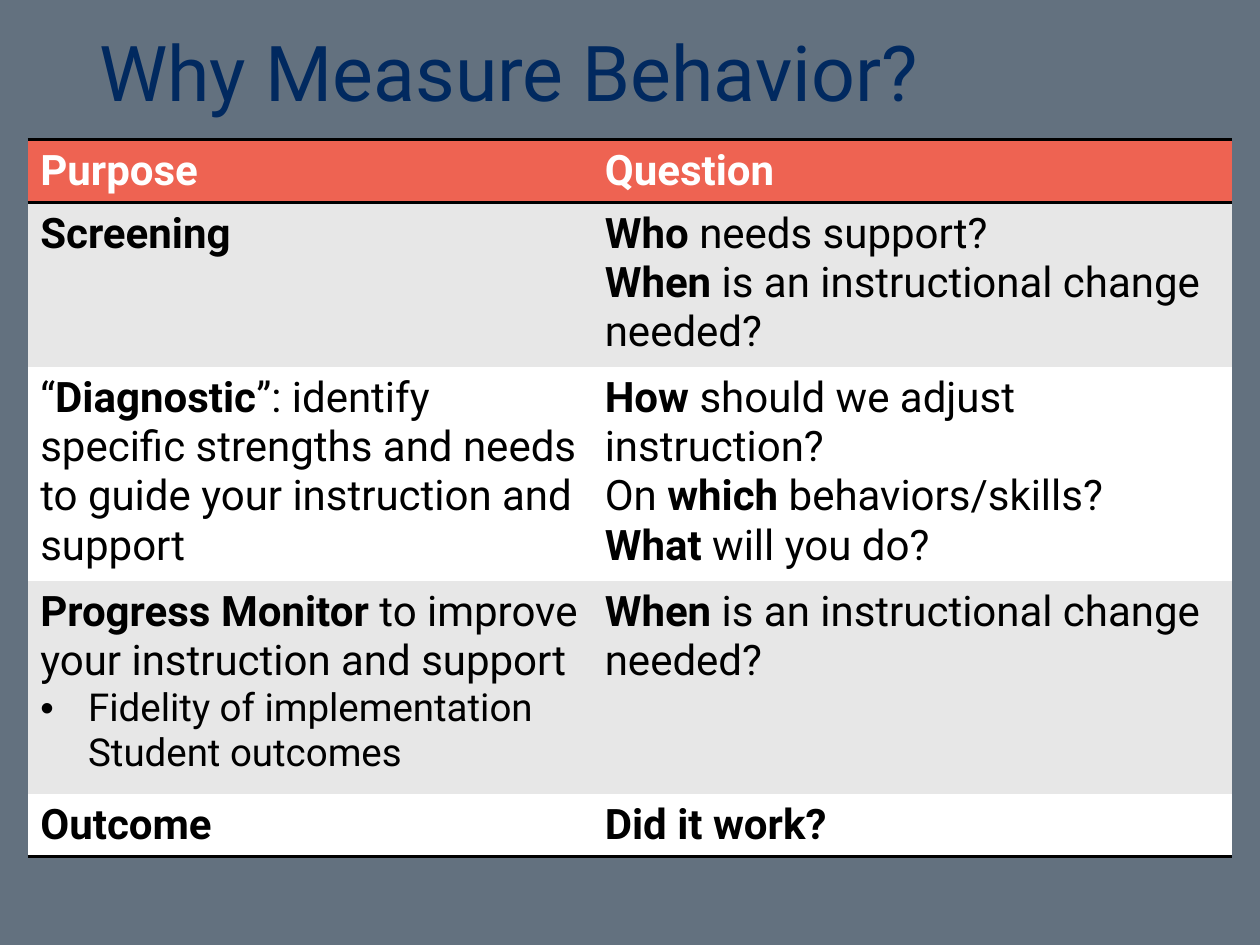
from pptx import Presentation
from pptx.dml.color import RGBColor
from pptx.enum.text import MSO_ANCHOR
from pptx.oxml.ns import qn
from pptx.util import Inches, Pt
from lxml import etree

MIDDLE = MSO_ANCHOR.MIDDLE
SLATE = RGBColor(0x63, 0x71, 0x7F)
NAVY = RGBColor(0x01, 0x29, 0x5F)
CORAL = RGBColor(0xEE, 0x63, 0x52)
GREY = RGBColor(0xE7, 0xE7, 0xE7)
WHITE = RGBColor(0xFF, 0xFF, 0xFF)
BLACK = RGBColor(0, 0, 0)
FONT = "Roboto"
PLAIN_STYLE = "{2D5ABB26-0587-4C30-8999-92F81FD0307C}"

COLS = [4.48, 5.08]
HEIGHTS = [0.45, 0.8, 1.16, 1.69, 0.45]
BULLET = "•"
# Each cell is a list of paragraphs; ** switches bold on and off.
ROWS = [
    (["**Purpose**"], ["**Question**"]),
    (["**Screening**"],
     ["**Who** needs support?",
      "**When** is an instructional change needed?"]),
    (["“**Diagnostic**”: identify specific strengths and needs "
      "to guide your instruction and support"],
     ["**How** should we adjust instruction?",
      "On **which** behaviors/skills?",
      "**What** will you do?"]),
    (["**Progress Monitor **to improve your instruction and support",
      BULLET + "Fidelity of implementation Student outcomes"],
     ["**When** is an instructional change needed?"]),
    (["**Outcome**"], ["**Did it work?**"]),
]


def style(run, size, color, bold=False):
    font = run.font
    font.name, font.size, font.bold = FONT, Pt(size), bold
    font.color.rgb = color


def add_title(slide, text):
    box = slide.shapes.add_textbox(Inches(0.69), Inches(0.17),
                                   Inches(8.62), Inches(0.87))
    frame = box.text_frame
    frame.word_wrap = True
    frame.vertical_anchor = MIDDLE
    frame.text = text
    para = frame.paragraphs[0]
    para.line_spacing = 0.9
    style(para.runs[0], 44, NAVY)


def add_bullet(para):
    props = para._p.get_or_add_pPr()
    props.set("marL", str(Inches(0.38)))
    props.set("indent", str(-Inches(0.38)))
    font = etree.SubElement(props, qn("a:buFont"))
    font.set("typeface", "Arial")
    etree.SubElement(props, qn("a:buChar")).set("char", BULLET)


def write(para, text, color):
    size = 24
    if text.startswith(BULLET):
        add_bullet(para)
        text, size = text[len(BULLET):], 22
    for i, part in enumerate(text.split("**")):
        if part:
            run = para.add_run()
            run.text = part
            style(run, size, color, bold=i % 2 == 1)


def add_rules(cell, sides):
    """Draw black lines on the given sides, listed top before bottom."""
    props = cell._tc.get_or_add_tcPr()
    for i, side in enumerate(sides):
        line = etree.Element(qn("a:ln" + side), w=str(Pt(2)))
        fill = etree.SubElement(line, qn("a:solidFill"))
        etree.SubElement(fill, qn("a:srgbClr")).set("val", str(BLACK))
        props.insert(i, line)


def fill_cell(cell, lines, back, color):
    cell.fill.solid()
    cell.fill.fore_color.rgb = back
    frame = cell.text_frame
    for i, text in enumerate(lines):
        para = frame.add_paragraph() if i else frame.paragraphs[0]
        write(para, text, color)


def add_grid(slide):
    height = Inches(5.29)
    shape = slide.shapes.add_table(len(ROWS), len(COLS), Inches(0.22),
                                   Inches(1.11), Inches(sum(COLS)), height)
    table = shape.table
    table.horz_banding = False
    table._tbl.tblPr.find(qn("a:tableStyleId")).text = PLAIN_STYLE
    for col, width in zip(table.columns, COLS):
        col.width = Inches(width)
    for row, tall in zip(table.rows, HEIGHTS):
        row.height = Inches(tall)
    shape.height = height

    rules = {0: "TB", len(ROWS) - 1: "B"}
    for r, row in enumerate(ROWS):
        back = CORAL if r == 0 else GREY if r % 2 else WHITE
        color = WHITE if r == 0 else BLACK
        for c, lines in enumerate(row):
            cell = table.cell(r, c)
            fill_cell(cell, lines, back, color)
            add_rules(cell, rules.get(r, ""))


def main():
    deck = Presentation()
    deck.slide_width, deck.slide_height = Inches(10), Inches(7.5)
    slide = deck.slides.add_slide(deck.slide_layouts[6])
    slide.background.fill.solid()
    slide.background.fill.fore_color.rgb = SLATE
    add_title(slide, "Why Measure Behavior?")
    add_grid(slide)
    deck.save("out.pptx")


if __name__ == "__main__":
    main()
